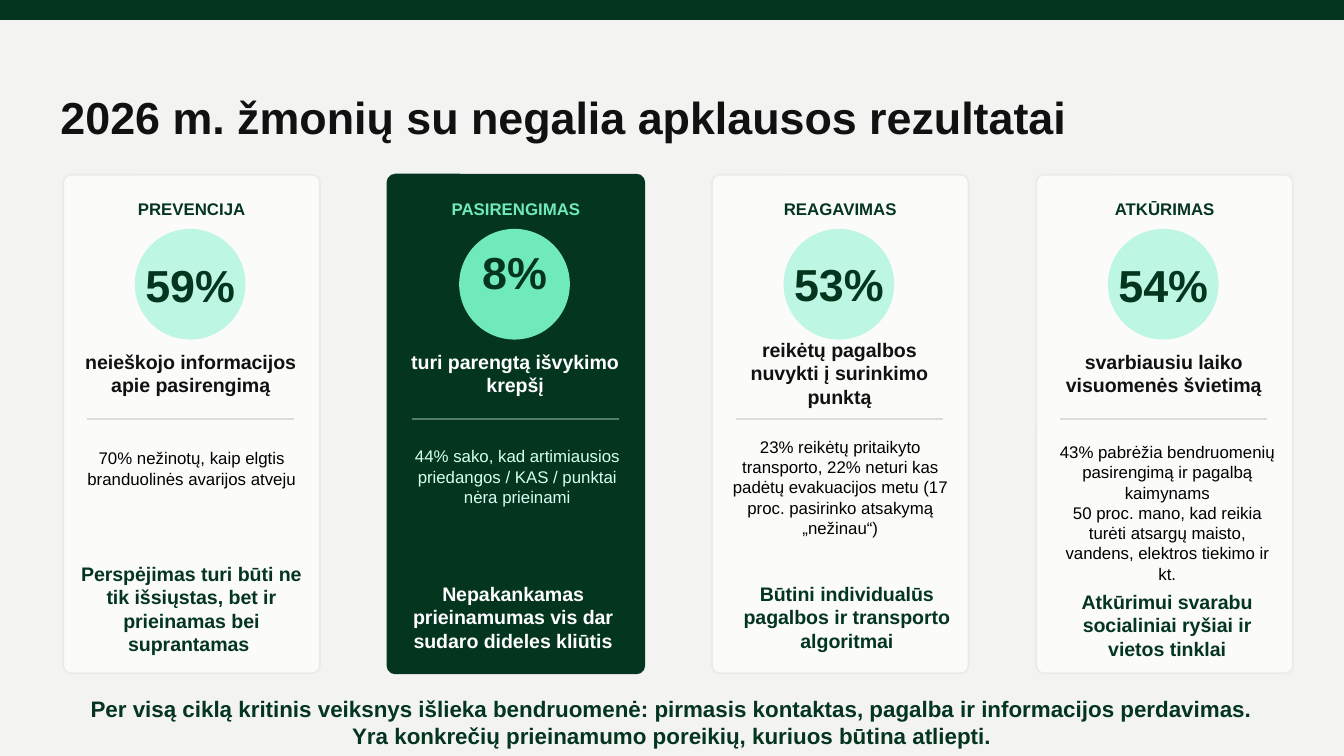
from pptx import Presentation
from pptx.dml.color import RGBColor
from pptx.enum.shapes import MSO_CONNECTOR, MSO_SHAPE
from pptx.enum.text import MSO_ANCHOR, PP_ALIGN
from pptx.util import Inches, Pt
from pptx.oxml.ns import qn
from lxml import etree

RECT = MSO_SHAPE.RECTANGLE
ROUND = MSO_SHAPE.ROUNDED_RECTANGLE
OVAL = MSO_SHAPE.OVAL
LINE = MSO_CONNECTOR.STRAIGHT
MIDDLE = MSO_ANCHOR.MIDDLE
LEFT = PP_ALIGN.LEFT
CENTER = PP_ALIGN.CENTER
color = RGBColor.from_string

GREEN = "04351F"
INK = "111111"
WHITE = "FFFFFF"

deck = Presentation()
deck.slide_width = Inches(10)
deck.slide_height = Inches(10 * 9 / 16)
slide = deck.slides.add_slide(deck.slide_layouts[6])
slide.background.fill.solid()
slide.background.fill.fore_color.rgb = color("F3F3F1")


def add_form(kind, x, y, w, h, fill, edge):
    form = slide.shapes.add_shape(kind, Inches(x), Inches(y), Inches(w), Inches(h))
    form.shadow.inherit = False
    form.fill.solid()
    form.fill.fore_color.rgb = color(fill)
    form.line.color.rgb = color(edge)
    form.line.width = Pt(1)
    return form


def add_text(text, x, y, w, h, size, ink, bold=True, align=CENTER):
    box = slide.shapes.add_textbox(Inches(x), Inches(y), Inches(w), Inches(h))
    frame = box.text_frame
    frame.word_wrap = True
    frame.vertical_anchor = MIDDLE
    frame.margin_left = frame.margin_right = 0
    frame.margin_top = frame.margin_bottom = 0
    frame.text = text
    for para in frame.paragraphs:
        para.alignment = align
        for run in para.runs:
            run.font.name = "Arial"
            run.font.size = Pt(size)
            run.font.bold = bold
            run.font.color.rgb = color(ink)


add_form(RECT, 0, 0, 10, 0.14, GREEN, GREEN)
add_text("2026 m. žmonių su negalia apklausos rezultatai",
         0.45, 0.43, 9.35, 0.87, 24, INK, align=LEFT)

light = dict(fill="FBFBFA", edge="E8ECEA", head=GREEN, disc="BDF6E2",
             claim=INK, rule="D9DDDB", detail="000000", note=GREEN)
dark = dict(fill=GREEN, edge=GREEN, head="70E9BB", disc="70E9BB",
            claim=WHITE, rule="537B68", detail="D8FFF1", note=WHITE)

cards = [
    (light, "PREVENCIJA", "59%", 2.05,
     "neieškojo informacijos apie pasirengimą",
     "70% nežinotų, kaip elgtis branduolinės avarijos atveju", 0.13, 3.25,
     "Perspėjimas turi būti ne tik išsiųstas, bet ir prieinamas bei suprantamas ",
     0.13, 4.32),
    (dark, "PASIRENGIMAS", "8%", 1.95,
     "turi parengtą išvykimo krepšį",
     "44% sako, kad artimiausios priedangos / KAS / punktai nėra prieinami",
     0.14, 3.31,
     "Nepakankamas prieinamumas vis dar sudaro dideles kliūtis", 0.11, 4.38),
    (light, "REAGAVIMAS", "53%", 2.04,
     "reikėtų pagalbos nuvykti į surinkimo punktą",
     "23% reikėtų pritaikyto transporto, 22% neturi kas padėtų evakuacijos metu "
     "(17 proc. pasirinko atsakymą „nežinau“)", 0.13, 3.39,
     "Būtini individualūs pagalbos ir transporto algoritmai", 0.18, 4.38),
    (light, "ATKŪRIMAS", "54%", 2.05,
     "svarbiausiu laiko visuomenės švietimą",
     "43% pabrėžia bendruomenių pasirengimą ir pagalbą kaimynams\n"
     "50 proc. mano, kad reikia turėti atsargų maisto, vandens, "
     "elektros tiekimo ir kt.", 0.15, 3.58,
     "Atkūrimui svarabu socialiniai ryšiai ir vietos tinklai", 0.15, 4.44),
]

for i, card in enumerate(cards):
    (look, head, share, share_y, claim,
     detail, detail_x, detail_y, note, note_x, note_y) = card
    x = 0.47 + i * 7.24 / 3
    panel = add_form(ROUND, x, 1.3, 1.91, 3.71, look["fill"], look["edge"])
    panel.adjustments[0] = 0.03
    add_text(head, x + 0.12, 1.49, 1.67, 0.12, 9, look["head"])
    add_form(OVAL, x + 0.54, 1.71, 0.81, 0.81, look["disc"], look["disc"])
    add_text(share, x + 0.59, share_y, 0.71, 0.14, 24, GREEN)
    add_text(claim, x + 0.13, 2.58, 1.64, 0.39, 10.5, look["claim"])
    rule = slide.shapes.add_connector(
        LINE, Inches(x + 0.18), Inches(3.12), Inches(x + 1.72), Inches(3.12))
    rule.line.color.rgb = color(look["rule"])
    rule.line.width = Pt(1)
    etree.SubElement(rule._element.spPr, qn("a:effectLst"))
    add_text(detail, x + detail_x, detail_y, 1.65, 0.47, 9, look["detail"], bold=False)
    add_text(note, x + note_x, note_y, 1.65, 0.42, 10.5, look["note"])

add_text("Per visą ciklą kritinis veiksnys išlieka bendruomenė: pirmasis kontaktas, "
         "pagalba ir informacijos perdavimas.\n"
         "Yra konkrečių prieinamumo poreikių, kuriuos būtina atliepti.",
         0.65, 5.31, 8.7, 0.12, 12, GREEN)

deck.save("out.pptx")
